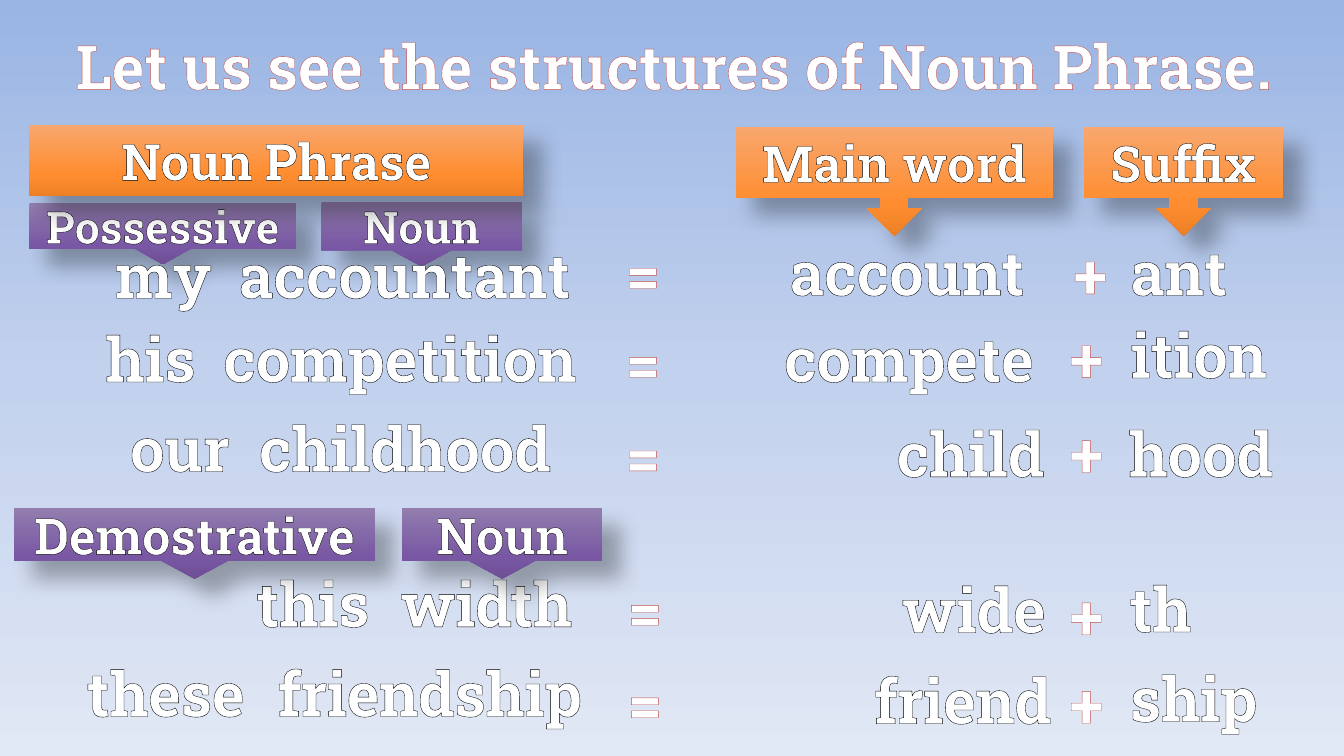
from lxml import etree
from pptx import Presentation
from pptx import util as u
from pptx.dml import color
from pptx.enum import shapes, text
from pptx.oxml import ns

WHITE, BLACK, RED = "FFFFFF", "000000", "C0504D"
SKY = [(0, "9AB5E4"), (50, "C2D1ED"), (100, "E1E8F5")]
PURPLE = [(0, "927DAE"), (69, "7957A4"), (100, "6E4F95")]
ORANGE = [(0, "F8A76E"), (69, "FF8D30"), (100, "ED8026")]
FONT = {"name": "Roboto Slab", "bold": True}
GROWING = {"auto_size": text.MSO_AUTO_SIZE.SHAPE_TO_FIT_TEXT,
           "vertical_anchor": text.MSO_ANCHOR.TOP}
CENTRED = {"auto_size": text.MSO_AUTO_SIZE.NONE,
           "vertical_anchor": text.MSO_ANCHOR.MIDDLE}
LINE_HEIGHT = 2.13

# Purple heads have no shaft; the second value is half the head's width
POSSESSIVE_HEAD = (0.25, 0.446, 0.25, 0.75)
NOUN_HEAD = (0.25, 0.464, 0.25, 0.75)

# Callouts: label, left, top, width, height, size, head
UPPER_LABELS = [
    ("Possessive", 0.74, 5.11, 6.73, 1.55, 32, POSSESSIVE_HEAD),
    ("Noun", 8.1, 5.08, 5.05, 1.63, 32, NOUN_HEAD),
]
LOWER_LABELS = [
    ("Demostrative", 0.36, 12.8, 9.09, 1.78, 36, NOUN_HEAD),
    ("Noun", 10.13, 12.8, 5.05, 1.78, 36, NOUN_HEAD),
]
PART_LABELS = [
    ("Main word", 18.54, 3.2, 8, 2.74, 36, ()),
    ("Suffix", 27.31, 3.2, 5.03, 2.74, 36, ()),
]

# Equations: each part is word, left, top; the nouns have widths of their own
DETERMINER, EQUALS, BASE, PLUS, SUFFIX = 8.61, 1.27, 7.16, 1.35, 5.41
EQUATIONS = [
    (9.42, [("my", -0.18, 5.84), ("accountant", 5.49, 5.84), ("=", 15.52, 5.84),
            ("account", 19.28, 5.77), ("+", 26.8, 5.84), ("ant", 27, 5.77)]),
    (10.21, [("his", -0.51, 7.95), ("competition", 4.98, 7.95), ("=", 15.52, 8.08),
             ("compete", 19.33, 7.95), ("+", 26.7, 7.95), ("ition", 27.51, 7.85)]),
    (9.8, [("our", 0.23, 10.21), ("childhood", 5.31, 10.21), ("=", 15.52, 10.44),
           ("child", 20.88, 10.34), ("+", 26.7, 10.34), ("hood", 27.56, 10.34)]),
    (8.61, [("this", 3.58, 14.12), ("width", 7.95, 14.12), ("=", 15.57, 14.33),
            ("wide", 20.96, 14.27), ("+", 26.7, 14.43), ("th", 26.54, 14.25)]),
    (8.61, [("these", -0.13, 16.38), ("friendship", 6.53, 16.38), ("=", 15.57, 16.66),
            ("friend", 20.68, 16.56), ("+", 26.7, 16.66), ("ship", 27.38, 16.51)]),
]


def rgb(code):
    return color.RGBColor.from_string(code)


def apply(target, values):
    for key, value in values.items():
        setattr(target, key, value)


def add_xml(parent, tag, **attributes):
    return etree.SubElement(parent, ns.qn(tag), attributes)


def set_gradient(fill, owner, stops):
    """Fill from top to bottom with any number of stops."""
    fill.gradient()
    fill.gradient_angle = 270
    stop_list = next(owner.iter(ns.qn("a:gsLst")))
    for old in list(stop_list):
        stop_list.remove(old)
    for percent, code in stops:
        stop = add_xml(stop_list, "a:gs", pos=str(percent * 1000))
        add_xml(stop, "a:srgbClr", val=code)


def add_shadow(shape):
    shape.shadow.inherit = False
    effects = shape.element.spPr.find(ns.qn("a:effectLst"))
    shadow = add_xml(effects, "a:outerShdw", blurRad=str(u.Pt(15)), dist=str(u.Pt(18)),
                     dir="2700000", algn="ctr", rotWithShape="0")
    tint = add_xml(shadow, "a:srgbClr", val=BLACK)
    add_xml(tint, "a:alpha", val="30000")


def write(shape, wording, size, outline, width, frame_format):
    """Centred white lettering with a coloured outline."""
    frame = shape.text_frame
    apply(frame, {"word_wrap": True, **frame_format})
    paragraph = frame.paragraphs[0]
    paragraph.alignment = text.PP_ALIGN.CENTER
    run = paragraph.add_run()
    run.text = wording
    apply(run.font, {**FONT, "size": u.Pt(size)})
    run.font.color.rgb = rgb(WHITE)
    properties = run.font._element
    edge = add_xml(properties, "a:ln", w=str(u.Pt(width)))
    add_xml(add_xml(edge, "a:solidFill"), "a:srgbClr", val=outline)
    properties.insert(0, edge)


def add_title(slide, wording):
    title = slide.shapes.title
    apply(title, {"left": u.Cm(0.81), "top": u.Cm(0.58),
                  "width": u.Cm(32.39), "height": u.Cm(LINE_HEIGHT)})
    write(title, wording, 44, RED, 0.52, GROWING)


def add_word(slide, wording, left, top, width):
    word = slide.shapes.add_textbox(u.Cm(left), u.Cm(top), u.Cm(width), u.Cm(LINE_HEIGHT))
    outline, weight = (RED, 0.52) if wording in "=+" else (BLACK, 0.75)
    write(word, wording, 44, outline, weight, GROWING)


def add_label(slide, kind, box, stops):
    label = slide.shapes.add_shape(kind, *map(u.Cm, box))
    set_gradient(label.fill, label.element.spPr, stops)
    label.line.fill.background()
    add_shadow(label)
    return label


def add_callouts(slide, labels, stops, frame_format):
    for wording, left, top, width, height, size, head in labels:
        callout = add_label(slide, shapes.MSO_SHAPE.DOWN_ARROW_CALLOUT,
                            (left, top, width, height), stops)
        for index, value in enumerate(head):
            callout.adjustments[index] = value
        write(callout, wording, size, BLACK, 1.06, frame_format)


def main():
    deck = Presentation()
    apply(deck, {"slide_width": u.Cm(33.87), "slide_height": u.Cm(19.05)})
    slide = deck.slides.add_slide(deck.slide_layouts[5])
    set_gradient(slide.background.fill, slide.element, SKY)

    # Title and upper labels
    add_title(slide, "Let us see the structures of Noun Phrase.")
    add_callouts(slide, UPPER_LABELS, PURPLE, CENTRED)

    # Word equations
    for noun, parts in EQUATIONS:
        widths = (DETERMINER, noun, EQUALS, BASE, PLUS, SUFFIX)
        for part, width in zip(parts, widths):
            add_word(slide, *part, width)

    # Remaining labels
    add_callouts(slide, PART_LABELS, ORANGE, GROWING)
    add_callouts(slide, LOWER_LABELS, PURPLE, CENTRED)
    noun_phrase = add_label(slide, shapes.MSO_SHAPE.RECTANGLE,
                            (0.74, 3.15, 12.45, 1.8), ORANGE)
    write(noun_phrase, "Noun Phrase", 36, BLACK, 0.75, GROWING)

    deck.save("out.pptx")


if __name__ == "__main__":
    main()
